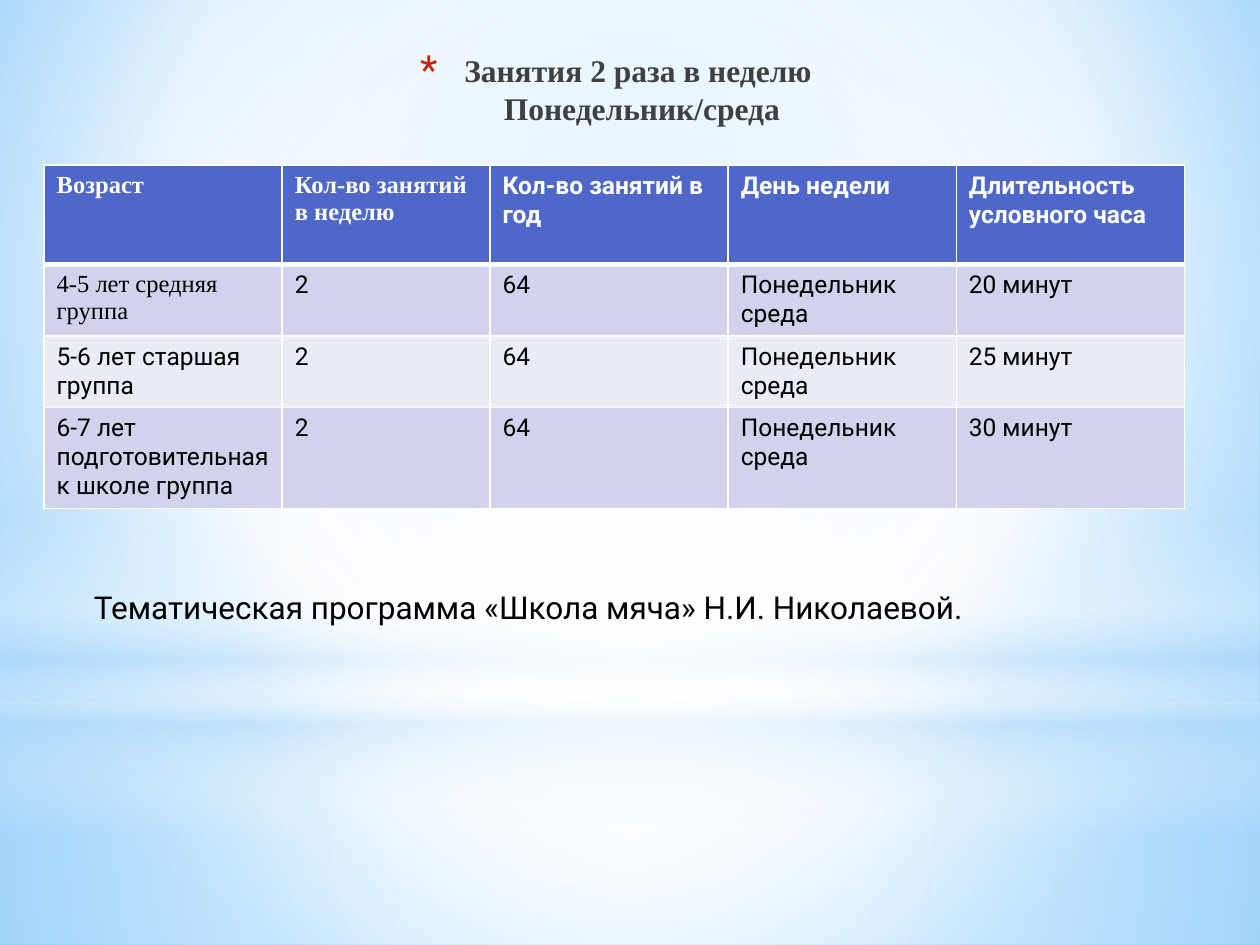
from dataclasses import dataclass
from typing import Optional

import pptx
import pptx.dml.color
import pptx.enum.shapes
import pptx.enum.text
import pptx.oxml
import pptx.oxml.ns
import pptx.util
from pptx.util import Inches

SHAPES = pptx.enum.shapes.MSO_SHAPE


@dataclass(frozen=True)
class Theme:
    serif: str = "Times New Roman"
    sans: str = "Roboto"
    heading_size: int = 18
    table_size: int = 14
    heading: str = "404040"
    bullet: str = "C3260C"
    body: str = "000000"
    white: str = "FFFFFF"
    sky: str = "B4DCFA"
    header_fill: str = "4E67C8"
    bands: tuple = ("D0D3EB", "E9EBF5")


THEME = Theme()


@dataclass(frozen=True)
class Stop:
    position: int
    color: str
    opacity: int = 100


@dataclass(frozen=True)
class Glow:
    """A backdrop layer; focus is left, top, right, bottom in percent, None is vertical."""
    shape: SHAPES
    top: float
    height: float
    stops: tuple
    focus: Optional[tuple] = (50, 50, 50, 50)


BACKGROUND_STOPS = (Stop(0, "9ED5FF"), Stop(60, THEME.white), Stop(100, "5BB9FF"))
GLOWS = (
    Glow(SHAPES.RECTANGLE, 5.58, 1.92,
         (Stop(0, THEME.white, 91), Stop(37, THEME.white, 76), Stop(100, THEME.sky, 79))),
    Glow(SHAPES.RECTANGLE, 0, 5.58,
         (Stop(0, THEME.white, 89), Stop(48, THEME.white, 62), Stop(100, THEME.sky, 79))),
    Glow(SHAPES.RECTANGLE, 4.12, 2.5,
         (Stop(0, THEME.white, 0), Stop(29, THEME.white, 30), Stop(45, THEME.sky, 40),
          Stop(55, THEME.white, 26), Stop(65, THEME.sky, 60), Stop(100, THEME.white, 0)), None),
    Glow(SHAPES.OVAL, 1.75, 5.58, (Stop(0, THEME.white), Stop(56, THEME.white, 0))),
)

HEADERS = ("Возраст", "Кол-во занятий в неделю", "Кол-во занятий в год",
           "День недели", "Длительность условного часа")
GROUPS = (("4-5 лет средняя группа", "20 минут"),
          ("5-6 лет старшая группа", "25 минут"),
          ("6-7 лет подготовительная к школе группа", "30 минут"))
SCHEDULE = [HEADERS] + [(group, "2", "64", "Понедельник среда", duration)
                        for group, duration in GROUPS]
SERIF_CELLS = {(0, 0), (0, 1), (1, 0)}
COLUMN_WIDTHS = (1.89, 1.65, 1.89, 1.81, 1.81)
ROW_HEIGHTS = (0.79, 0.56, 0.56, 0.79)


def xml(markup: str):
    return pptx.oxml.parse_xml(markup.replace(">", f' {pptx.oxml.ns.nsdecls("a")}>', 1))


def set_gradient(parent, stops: tuple, focus: Optional[tuple]) -> None:
    """Replace the empty fill inside parent with a gradient."""
    marks = "".join(
        f'<a:gs pos="{s.position * 1000}"><a:srgbClr val="{s.color}">'
        f'<a:alpha val="{s.opacity * 1000}"/></a:srgbClr></a:gs>' for s in stops)
    if focus is None:
        direction = '<a:lin ang="5400000" scaled="0"/>'
    else:
        sides = " ".join(f'{side}="{value * 1000}"' for side, value in zip("ltrb", focus))
        direction = f'<a:path path="circle"><a:fillToRect {sides}/></a:path>'
    gradient = xml(f'<a:gradFill rotWithShape="1"><a:gsLst>{marks}</a:gsLst>'
                   f'{direction}</a:gradFill>')
    parent.replace(parent.find(pptx.oxml.ns.qn("a:noFill")), gradient)


def add_run(paragraph, text: str, font: str, size: int, color: str, bold: bool = False) -> None:
    run = paragraph.add_run()
    run.text = text
    run.font.name = font
    run.font.size = pptx.util.Pt(size)
    run.font.bold = bold
    run.font.color.rgb = pptx.dml.color.RGBColor.from_string(color)


def draw_backdrop(slide) -> None:
    slide.background.fill.background()
    set_gradient(slide.element.xpath(".//p:bgPr")[0], BACKGROUND_STOPS, (20, 10, 20, 60))
    for glow in GLOWS:
        layer = slide.shapes.add_shape(glow.shape, 0, Inches(glow.top),
                                       Inches(10), Inches(glow.height))
        layer.fill.background()
        set_gradient(layer.element.spPr, glow.stops, glow.focus)
        layer.line.fill.background()
        layer.shadow.inherit = False


def draw_heading(slide) -> None:
    frame = slide.shapes.add_textbox(Inches(0.43), Inches(0.36),
                                     Inches(8.98), Inches(6.93)).text_frame
    frame.word_wrap = True
    heading = frame.paragraphs[0]
    heading.alignment = pptx.enum.text.PP_ALIGN.CENTER
    style = (THEME.serif, THEME.heading_size, THEME.heading, True)
    add_run(heading, "Занятия 2 раза в неделю ", *style)
    heading.add_line_break()
    add_run(heading, "Понедельник/среда", *style)

    # Hanging asterisk bullet
    properties = heading._p.get_or_add_pPr()
    properties.set("marL", str(Inches(0.35)))
    properties.set("indent", str(Inches(-0.35)))
    for markup in (f'<a:buClr><a:srgbClr val="{THEME.bullet}"/></a:buClr>',
                   '<a:buSzPct val="128000"></a:buSzPct>',
                   f'<a:buFont typeface="{THEME.sans}"></a:buFont>',
                   '<a:buChar char="*"></a:buChar>'):
        properties.append(xml(markup))


def set_borders(cell, top: int, bottom: int) -> None:
    properties = cell._tc.get_or_add_tcPr()
    for index, (side, points) in enumerate(zip("LRTB", (1, 1, top, bottom))):
        properties.insert(index, xml(
            f'<a:ln{side} w="{pptx.util.Pt(points)}"><a:solidFill>'
            f'<a:srgbClr val="{THEME.white}"/></a:solidFill></a:ln{side}>'))


def draw_schedule(slide) -> None:
    table = slide.shapes.add_table(
        len(SCHEDULE), len(HEADERS), Inches(0.35), Inches(1.31),
        Inches(sum(COLUMN_WIDTHS)), Inches(sum(ROW_HEIGHTS))).table
    for column, width in zip(table.columns, COLUMN_WIDTHS):
        column.width = Inches(width)
    for r, (values, height) in enumerate(zip(SCHEDULE, ROW_HEIGHTS)):
        table.rows[r].height = Inches(height)
        is_header = r == 0
        fill = THEME.header_fill if is_header else THEME.bands[(r - 1) % 2]
        for c, value in enumerate(values):
            cell = table.cell(r, c)
            cell.fill.solid()
            cell.fill.fore_color.rgb = pptx.dml.color.RGBColor.from_string(fill)
            set_borders(cell, top=3 if r == 1 else 1, bottom=3 if is_header else 1)
            add_run(cell.text_frame.paragraphs[0], value,
                    THEME.serif if (r, c) in SERIF_CELLS else THEME.sans,
                    THEME.table_size, THEME.white if is_header else THEME.body, is_header)


def draw_programme(slide) -> None:
    frame = slide.shapes.add_textbox(Inches(0.59), Inches(4.62),
                                     Inches(7.24), Inches(0.4)).text_frame
    frame.word_wrap = False
    frame.auto_size = pptx.enum.text.MSO_AUTO_SIZE.SHAPE_TO_FIT_TEXT
    add_run(frame.paragraphs[0], " Тематическая программа «Школа мяча» Н.И. Николаевой.",
            THEME.sans, THEME.heading_size, THEME.body)


def main() -> None:
    presentation = pptx.Presentation()
    presentation.slide_width = Inches(10)
    presentation.slide_height = Inches(7.5)
    slide = presentation.slides.add_slide(presentation.slide_layouts[6])
    draw_backdrop(slide)
    draw_heading(slide)
    draw_schedule(slide)
    draw_programme(slide)
    presentation.save("out.pptx")


if __name__ == "__main__":
    main()
